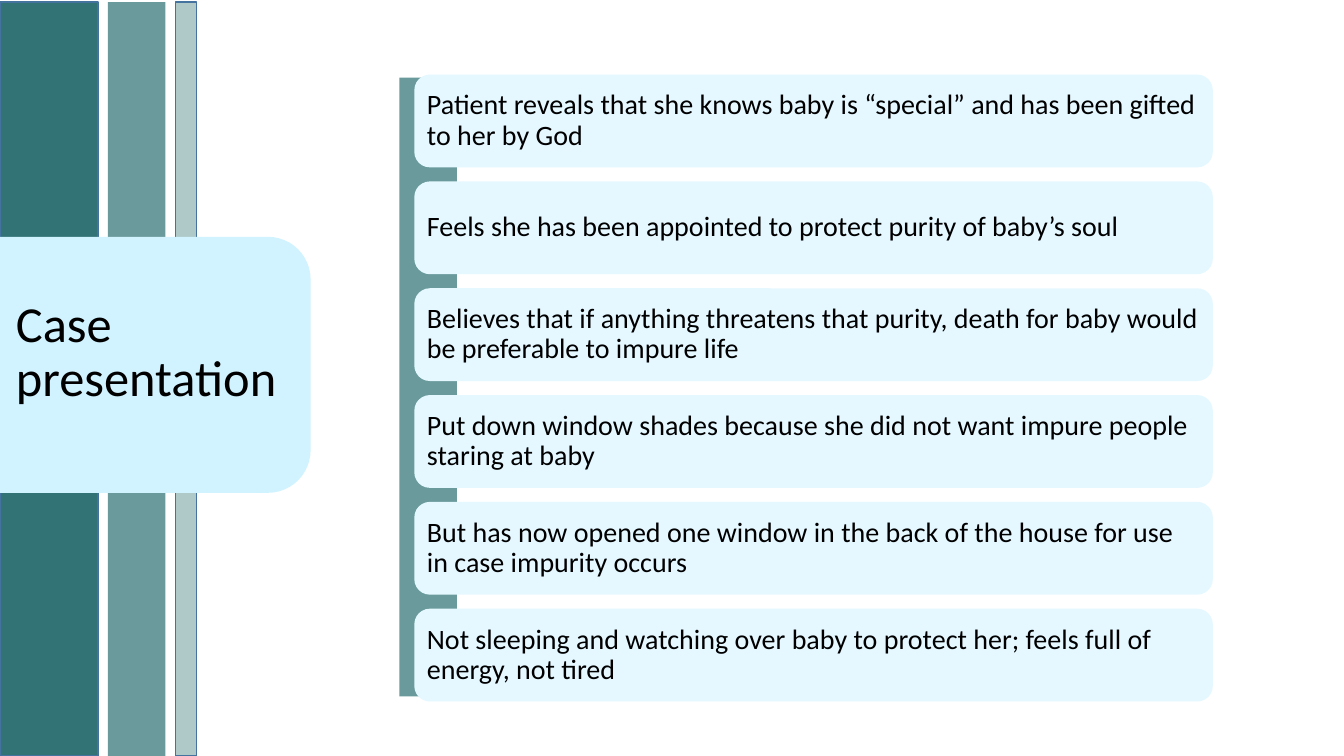
"""Build the case presentation slide: striped title panel and a stack of cards."""
from lxml import etree
from pptx import Presentation
from pptx.dml.color import RGBColor
from pptx.enum.shapes import MSO_SHAPE
from pptx.enum.text import MSO_ANCHOR, PP_ALIGN
from pptx.oxml.ns import qn
from pptx.util import Inches, Pt

RECT = MSO_SHAPE.RECTANGLE
CARD = MSO_SHAPE.ROUNDED_RECTANGLE
PANEL = MSO_SHAPE.ROUND_2_SAME_RECTANGLE
MIDDLE = MSO_ANCHOR.MIDDLE
LEFT = PP_ALIGN.LEFT

WIDTH, HEIGHT = Inches(13.33), Inches(7.5)
FONT = "Calibri"
COLORS = {
    "teal": "327476",
    "outline": "43739E",
    "panel": "D1F3FF",
    "card": "E5F8FF",
    "text": "000000",
}
STRIPES = [
    (13.05, 1.58, 39, "outline"),
    (8.03, 4.28, 72, None),
    (0, 7.28, 100, "outline"),
]
FINDINGS = [
    "Patient reveals that she knows baby is “special” and has been gifted to her by God",
    "Feels she has been appointed to protect purity of baby’s soul",
    "Believes that if anything threatens that purity, death for baby would be preferable to impure life",
    "Put down window shades because she did not want impure people staring at baby",
    "But has now opened one window in the back of the house for use in case impurity occurs",
    "Not sleeping and watching over baby to protect her; feels full of energy, not tired",
]
CARD_TOP, CARD_PITCH = 9.87, 14.13


def box(left, top, width, height):
    """Turn percentages of the slide into lengths."""
    return (int(WIDTH * left / 100), int(HEIGHT * top / 100),
            int(WIDTH * width / 100), int(HEIGHT * height / 100))


def color(name):
    """Look up a named colour."""
    return RGBColor.from_string(COLORS[name])


def add_block(slide, kind, place, fill, opacity=100, line=None):
    """Add a filled shape with optional transparency and outline."""
    s = slide.shapes.add_shape(kind, *place)
    s.shadow.inherit = False
    s.fill.solid()
    s.fill.fore_color.rgb = color(fill)
    if opacity < 100:
        rgb = s.element.spPr.find(qn("a:solidFill"))[0]
        etree.SubElement(rgb, qn("a:alpha"), val=str(opacity * 1000))
    if line:
        s.line.color.rgb = color(line)
        s.line.width = Pt(1)
    else:
        s.line.fill.background()
    return s


def add_side_panel(slide, place):
    """Add a panel rounded on its right side by turning a top-rounded one."""
    left, top, width, height = place
    shift = (width - height) // 2
    s = add_block(slide, PANEL, (left + shift, top - shift, height, width), "panel")
    s.rotation = 90


def write(s, lines, size, inset):
    """Write left-aligned lines, centred vertically, into a shape."""
    tf = s.text_frame
    tf.word_wrap = True
    tf.vertical_anchor = MIDDLE
    tf.margin_left = tf.margin_right = Inches(inset)
    p = tf.paragraphs[0]
    p.alignment = LEFT
    p.line_spacing = 0.9
    for i, line in enumerate(lines):
        if i:
            p.add_line_break()
        r = p.add_run()
        r.text = line
        r.font.name = FONT
        r.font.size = Pt(size)
        r.font.color.rgb = color("text")


def main():
    """Build and save the slide."""
    prs = Presentation()
    prs.slide_width, prs.slide_height = WIDTH, HEIGHT
    slide = prs.slides.add_slide(prs.slide_layouts[6])
    for left, width, opacity, line in STRIPES:
        add_block(slide, RECT, box(left, 0.27, width, 99.73), "teal", opacity, line)
    add_side_panel(slide, box(0, 31.33, 23.11, 33.87))
    add_block(slide, RECT, box(29.71, 10.27, 4.28, 81.87), "teal", 72)
    for i, finding in enumerate(FINDINGS):
        place = box(30.83, CARD_TOP + i * CARD_PITCH, 59.41, 12.27)
        write(add_block(slide, CARD, place, "card"), [finding], 20, 0.08)
    title = slide.shapes.add_textbox(*box(0.45, 35.33, 36.68, 22.8))
    write(title, ["Case", "presentation"], 36, 0.1)
    prs.save("out.pptx")


if __name__ == "__main__":
    main()
